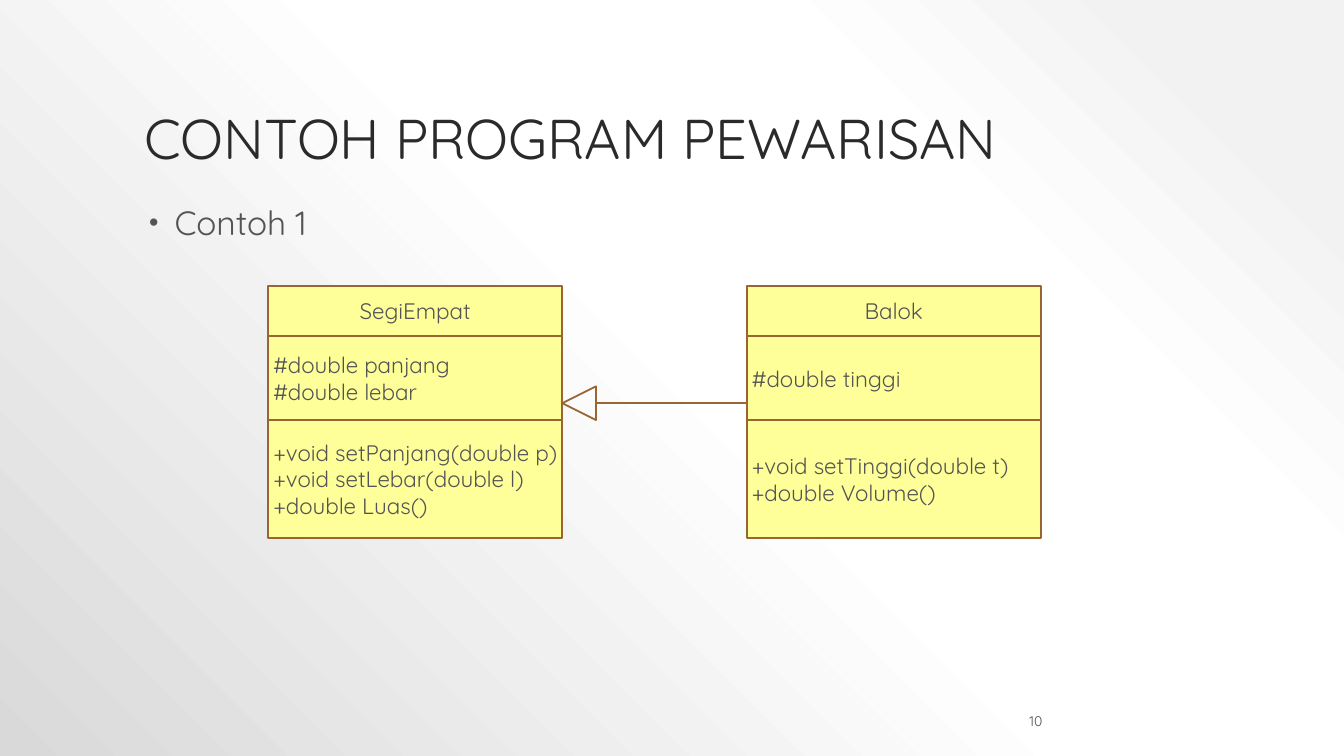
from pptx import Presentation
from pptx.dml.color import RGBColor
from pptx.enum.shapes import MSO_CONNECTOR, MSO_SHAPE
from pptx.enum.text import MSO_ANCHOR, PP_ALIGN
from pptx.oxml import parse_xml
from pptx.oxml.ns import nsdecls, qn
from pptx.util import Cm, Pt

LEFT, CENTER, RIGHT = PP_ALIGN.LEFT, PP_ALIGN.CENTER, PP_ALIGN.RIGHT
TOP, MIDDLE, BOTTOM = MSO_ANCHOR.TOP, MSO_ANCHOR.MIDDLE, MSO_ANCHOR.BOTTOM
RECT, TRIANGLE = MSO_SHAPE.RECTANGLE, MSO_SHAPE.ISOSCELES_TRIANGLE
STRAIGHT = MSO_CONNECTOR.STRAIGHT

FONT = "Quicksand"
COLORS = {"title": "2A2A2A", "text": "545454", "box": "FFFF99", "edge": "996633"}
STOPS = [(10, "F2F2F2"), (28, "FFFFFF"), (48, "FFFFFF"), (100, "D9D9D9")]
ROWS = [1.27, 2.12, 2.96]
WIDTH = 7.41
CLASSES = [
    (6.76, ["SegiEmpat"], ["#double panjang", "#double lebar"],
     ["+void setPanjang(double p)", "+void setLebar(double l)", "+double Luas()"]),
    (18.82, ["Balok"], ["#double tinggi"],
     ["+void setTinggi(double t)", "+double Volume()"]),
]


def color(name):
    return RGBColor.from_string(COLORS[name])


def paint(slide):
    """Fill the background with a radial gradient from the top right corner."""
    slide.background.fill.solid()
    solid = slide.background._cSld.find(".//" + qn("a:solidFill"))
    stops = "".join(f'<a:gs pos="{pos * 1000}"><a:srgbClr val="{tone}"/></a:gs>'
                    for pos, tone in STOPS)
    grad = parse_xml(
        f'<a:gradFill {nsdecls("a")} rotWithShape="1"><a:gsLst>{stops}</a:gsLst>'
        '<a:path path="circle"><a:fillToRect l="100000" b="100000"/></a:path>'
        '</a:gradFill>')
    solid.getparent().replace(solid, grad)


def write(shape, lines, size, tone="text", align=LEFT, space=None, **frame_format):
    frame = shape.text_frame
    for name, value in frame_format.items():
        setattr(frame, name, value)
    for i, line in enumerate(lines):
        para = frame.add_paragraph() if i else frame.paragraphs[0]
        para.alignment, para.line_spacing = align, space
        run = para.add_run()
        run.text = line
        for name, value in {"name": FONT, "size": Pt(size)}.items():
            setattr(run.font, name, value)
        run.font.color.rgb = color(tone)


def add_text(slide, box, line, size, **style):
    shape = slide.shapes.add_textbox(*map(Cm, box))
    write(shape, [line], size, word_wrap=True, **style)
    return shape


def add_bullet(shape):
    props = shape.text_frame.paragraphs[0]._p.get_or_add_pPr()
    props.set("marL", str(Cm(0.76)))
    props.set("indent", str(Cm(-0.64)))
    for part in (f'buClr {nsdecls("a")}><a:srgbClr val="{COLORS["text"]}"/></a:buClr>',
                 f'buSzPct {nsdecls("a")} val="80000"/>',
                 f'buFont {nsdecls("a")} typeface="Arial"/>',
                 f'buChar {nsdecls("a")} char="•"/>'):
        props.append(parse_xml("<a:" + part))


def edge(shape):
    shape.line.color.rgb = color("edge")
    shape.line.width = Pt(1.25)


def add_shape(slide, kind, box):
    shape = slide.shapes.add_shape(kind, *map(Cm, box))
    shape.shadow.inherit = False
    edge(shape)
    return shape


def add_class(slide, left, top, parts):
    """Stack the name, attribute and method boxes of one class."""
    for i, (lines, height) in enumerate(zip(parts, ROWS)):
        shape = add_shape(slide, RECT, (left, top, WIDTH, height))
        shape.fill.solid()
        shape.fill.fore_color.rgb = color("box")
        pads = {f"margin_{side}": Cm(0.13)
                for side in ("left", "top", "right", "bottom")} if i else {}
        write(shape, lines, 16, align=LEFT if i else CENTER,
              vertical_anchor=MIDDLE, word_wrap=False, **pads)
        top += height


def add_arrow(slide, start, end, y, size=0.85):
    """Draw the hollow inheritance arrow, its tip at start."""
    head = add_shape(slide, TRIANGLE, (start, y - size / 2, size, size))
    head.rotation = 270
    head.fill.background()
    line = slide.shapes.add_connector(
        STRAIGHT, Cm(start + size), Cm(y), Cm(end), Cm(y))
    edge(line)
    line._element.spPr.append(parse_xml(f'<a:effectLst {nsdecls("a")}/>'))


def add_diagram(slide, top):
    for left, *parts in CLASSES:
        add_class(slide, left, top, parts)
    add_arrow(slide, CLASSES[0][0] + WIDTH, CLASSES[1][0], top + 2.96)


def main():
    deck = Presentation()
    deck.slide_width, deck.slide_height = Cm(33.87), Cm(19.05)
    slide = deck.slides.add_slide(deck.slide_layouts[6])
    paint(slide)
    add_text(slide, (22.63, 17.91, 3.89, 0.51), "10", 10,
             align=RIGHT, vertical_anchor=MIDDLE)
    add_text(slide, (3.39, 0.76, 27.1, 3.68), "CONTOH PROGRAM PEWARISAN", 40,
             tone="title", space=0.9, vertical_anchor=BOTTOM)
    body = add_text(slide, (3.39, 5.08, 27.1, 12.07), "Contoh 1", 24,
                    space=0.9, vertical_anchor=TOP)
    add_bullet(body)
    add_diagram(slide, 7.2)
    deck.save("out.pptx")


if __name__ == "__main__":
    main()
